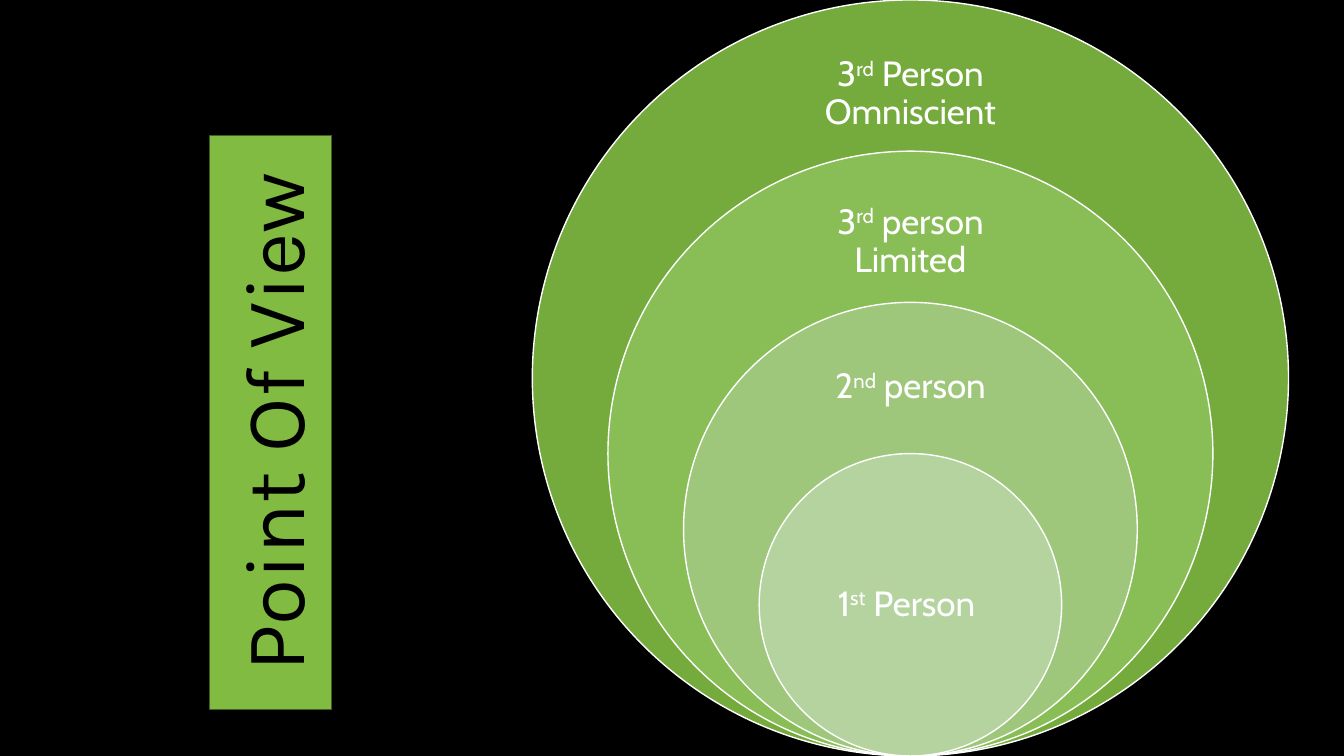
from pptx import Presentation
from pptx import util as u
from pptx.dml.color import RGBColor
from pptx.enum import shapes, text

# Content: number, ordinal suffix, rest, fill, then label top and height as shares of the ring
TITLE = "Point Of View"
RINGS = [
    ("3", "rd", " Person Omniscient", "75AA3C", 0.05, 0.15),
    ("3", "rd", " person Limited", "89BE56", 0.06, 0.18),
    ("2", "nd", " person", "9EC77B", 0.075, 0.225),
    ("1", "st", " Person ", "B4D39F", 0.25, 0.5),
]
THEME = {
    "background": "000000", "banner": "81BB42", "banner_line": "405E21",
    "title": "000000", "label": "FFFFFF", "ring_line": "FFFFFF",
    "title_font": "Karla", "label_font": "Cabin",
    "title_size": 60, "label_size": 25,
}

# Layout: rings share a centre line and rest on the slide's bottom edge
WIDTH, HEIGHT = 13.33, 7.5
CENTRE = 9.03
RING_STEP = HEIGHT / 5
LABEL_WIDTH = 2.1
INSET = 0.19
BANNER = (2.08, 1.34, 1.21, 5.7)


def color(name):
    return RGBColor.from_string(THEME.get(name, name))


def add_panel(s, kind, box, fill, line, weight):
    sp = s.shapes.add_shape(kind, *map(u.Inches, box))
    sp.shadow.inherit = False
    sp.fill.solid()
    sp.fill.fore_color.rgb = color(fill)
    sp.line.color.rgb = color(line)
    sp.line.width = u.Pt(weight)
    return sp


def add_run(p, words, style):
    r = p.add_run()
    r.text = words
    r.font.name = THEME[style + "_font"]
    r.font.size = u.Pt(THEME[style + "_size"])
    r.font.color.rgb = color(style)
    return r


def centred_paragraph(tf):
    tf.vertical_anchor = text.MSO_ANCHOR.MIDDLE
    p = tf.paragraphs[0]
    p.alignment = text.PP_ALIGN.CENTER
    return p


def add_label(s, box, number, suffix, rest):
    tf = s.shapes.add_textbox(*map(u.Inches, box)).text_frame
    tf.word_wrap = True
    tf.margin_left = tf.margin_right = u.Inches(INSET)
    tf.margin_top = tf.margin_bottom = u.Inches(INSET)
    p = centred_paragraph(tf)
    p.line_spacing = 0.9
    add_run(p, number, "label")
    add_run(p, suffix, "label").font._element.set("baseline", "30000")
    add_run(p, rest, "label")


def add_banner(s):
    sp = add_panel(s, shapes.MSO_SHAPE.RECTANGLE, BANNER,
                   "banner", "banner_line", 0.75)
    sp.element.txBody.bodyPr.set("vert", "vert270")
    add_run(centred_paragraph(sp.text_frame), TITLE, "title")


def main():
    prs = Presentation()
    prs.slide_width, prs.slide_height = u.Inches(WIDTH), u.Inches(HEIGHT)
    s = prs.slides.add_slide(prs.slide_layouts[6])
    s.background.fill.solid()
    s.background.fill.fore_color.rgb = color("background")

    # Rings from the largest to the smallest, each with its label
    for i, (number, suffix, rest, fill, top, height) in enumerate(RINGS):
        diameter = HEIGHT - i * RING_STEP
        ring_top = HEIGHT - diameter
        add_panel(s, shapes.MSO_SHAPE.OVAL,
                  (CENTRE - diameter / 2, ring_top, diameter, diameter),
                  fill, "ring_line", 1)
        add_label(s, (CENTRE - LABEL_WIDTH / 2, ring_top + diameter * top,
                      LABEL_WIDTH, diameter * height), number, suffix, rest)

    # Vertical banner
    add_banner(s)

    prs.save("out.pptx")


if __name__ == "__main__":
    main()
